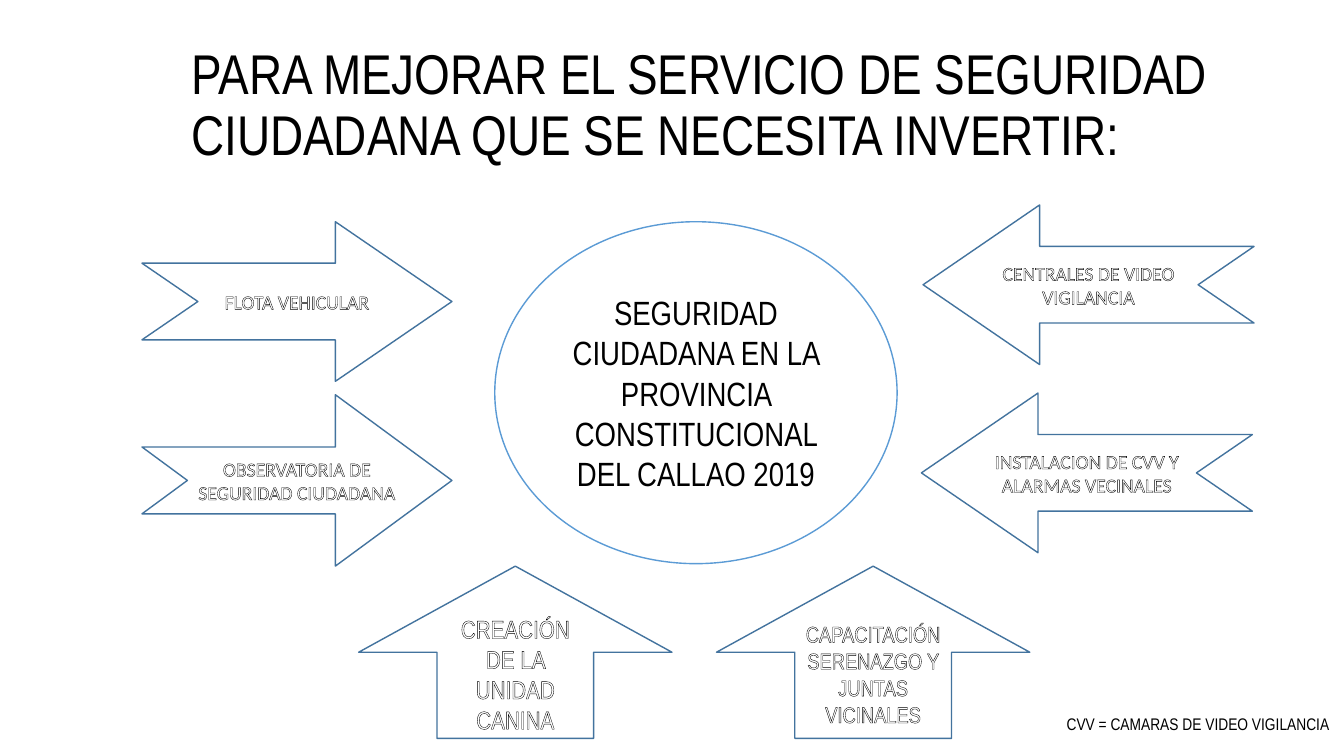
import pptx
import pptx.util
import pptx.dml.color
import pptx.enum.shapes
import pptx.enum.text
import pptx.oxml
import pptx.oxml.ns

COLS, ROWS = 160, 90
CELL = pptx.util.Inches(1 / 12)
COLORS = {"ink": "000000", "paper": "FFFFFF", "ring": "5B9BD5", "edge": "43739E"}
NARROW, PLAIN = "Arial Narrow", "Calibri"
SHAPE = pptx.enum.shapes.MSO_SHAPE
ALIGN = pptx.enum.text.PP_ALIGN
ANCHOR = pptx.enum.text.MSO_ANCHOR


def rgb(name):
    """Return the named colour."""
    return pptx.dml.color.RGBColor.from_string(COLORS[name])


def cells(box):
    """Turn a box in columns and rows into slide lengths."""
    return [round(n * CELL) for n in box]


def write(frame, text, size, face, color="ink", align=ALIGN.LEFT):
    """Write one paragraph and return it."""
    para = frame.paragraphs[0]
    para.text, para.alignment = text, align
    font = para.font
    font.size, font.name = pptx.util.Pt(size), face
    font.color.rgb = rgb(color)
    return para


def outline(para):
    """Draw a thin dark line round the letters."""
    space = pptx.oxml.ns.nsdecls("a")
    line = pptx.oxml.parse_xml(
        f'<a:ln {space} w="9525"><a:solidFill><a:srgbClr val="{COLORS["ink"]}"/>'
        "</a:solidFill></a:ln>")
    para._p.pPr.defRPr.insert(0, line)


def figure(slide, kind, box, text, size, face, edge="edge", color="paper"):
    """Add a hollow shape with centred, outlined text."""
    shape = slide.shapes.add_shape(kind, *cells(box))
    shape.shadow.inherit = False
    shape.fill.background()
    shape.line.color.rgb = rgb(edge)
    shape.line.width = pptx.util.Pt(1)
    frame = shape.text_frame
    frame.word_wrap, frame.vertical_anchor = True, ANCHOR.MIDDLE
    outline(write(frame, text, size, face, color, ALIGN.CENTER))
    return shape


def label(slide, box, text, size, wrap=True):
    """Add plain text in a box."""
    frame = slide.shapes.add_textbox(*cells(box)).text_frame
    frame.word_wrap = wrap
    return frame, write(frame, text, size, NARROW)


def heading(slide, box):
    """Add the title."""
    text = "PARA MEJORAR EL SERVICIO DE SEGURIDAD CIUDADANA QUE SE NECESITA INVERTIR:"
    frame, para = label(slide, box, text, 40)
    frame.vertical_anchor = ANCHOR.MIDDLE
    para.line_spacing = 0.9


def side(slide, box, items, flip=False):
    """Stack notched arrows that point to the centre."""
    left, top, width, _ = box
    for text, shift, down, high, thick, tip in items:
        place = (left + shift, top + down, width, high)
        arrow = figure(slide, SHAPE.NOTCHED_RIGHT_ARROW, place, text, 14, PLAIN)
        arrow.adjustments[0], arrow.adjustments[1] = thick, tip
        if flip:
            arrow._element.spPr.xfrm.set("flipH", "1")


def base(slide, box, items):
    """Set up arrows side by side, at both ends of the box."""
    left, top, width, high = box
    wide = 37.3
    step = (width - wide) / (len(items) - 1)
    for num, (text, size) in enumerate(items):
        place = (left + num * step, top, wide, high)
        figure(slide, SHAPE.UP_ARROW, place, text, size, NARROW)


def main():
    """Build and save the slide."""
    deck = pptx.Presentation()
    deck.slide_width, deck.slide_height = cells((COLS, ROWS))
    slide = deck.slides.add_slide(deck.slide_layouts[6])
    heading(slide, (21.6, 4.7, 134, 16))
    figure(slide, SHAPE.OVAL, (58.9, 26.4, 47.9, 40.7),
           "SEGURIDAD CIUDADANA EN LA PROVINCIA CONSTITUCIONAL DEL CALLAO 2019",
           24, NARROW, "ring", "ink")
    side(slide, (16.9, 26.4, 36.9, 41), [
        ("FLOTA VEHICULAR", 0, 0, 19, 0.48, 0.73),
        ("OBSERVATORIA DE SEGURIDAD CIUDADANA", 0, 20.6, 20.4, 0.39, 0.68)])
    side(slide, (109.7, 24.4, 39.4, 41.4), [
        ("CENTRALES DE VIDEO VIGILANCIA", 0.2, 0, 19, 0.48, 0.73),
        ("INSTALACION DE CVV Y ALARMAS VECINALES", 0, 22.4, 19, 0.48, 0.73)], True)
    label(slide, (125.8, 84.4, 34.2, 3.6), "CVV = CAMARAS DE VIDEO VIGILANCIA", 12, False)
    base(slide, (42.7, 67.4, 79.9, 20.5), [
        ("CREACIÓN DE LA UNIDAD CANINA", 18),
        ("CAPACITACIÓN SERENAZGO Y JUNTAS VICINALES", 16)])
    deck.save("out.pptx")


if __name__ == "__main__":
    main()
